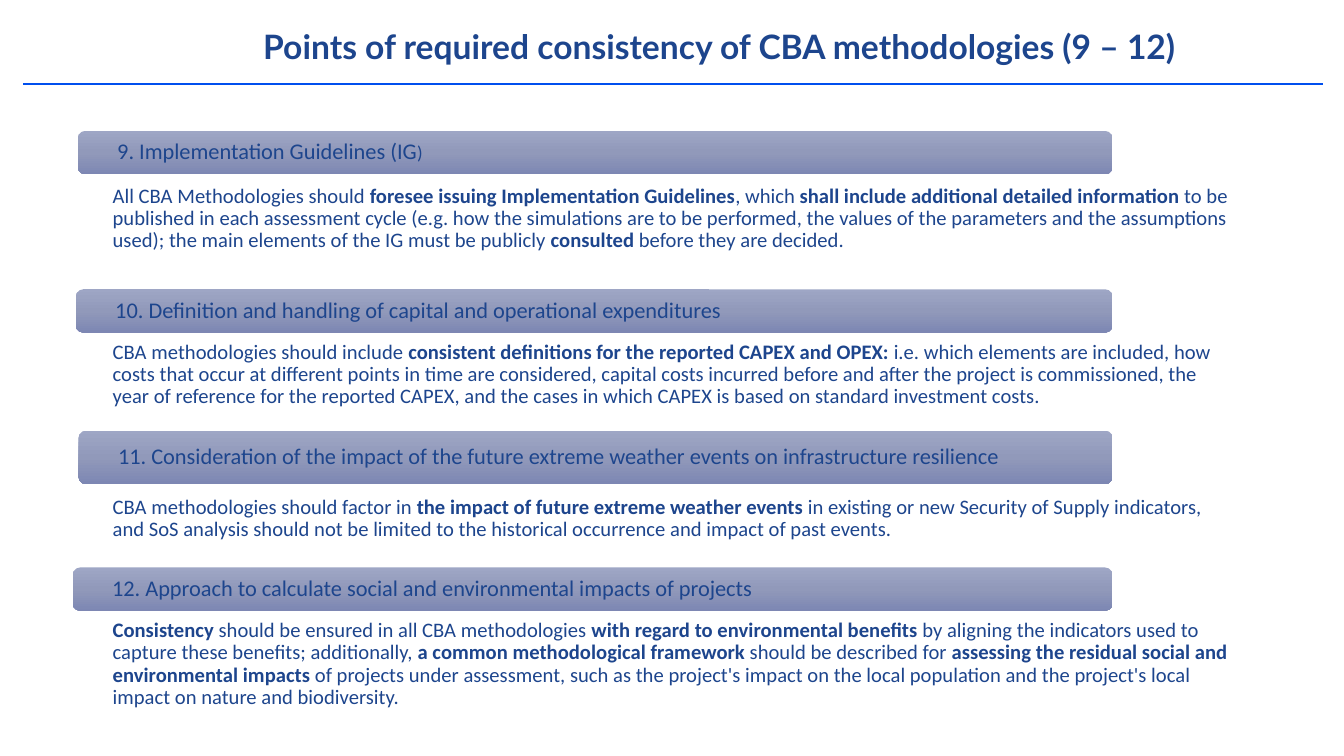
from copy import deepcopy
from dataclasses import dataclass

from lxml.etree import SubElement
from pptx import Presentation
from pptx.dml.color import RGBColor
from pptx.enum.shapes import MSO_CONNECTOR, MSO_SHAPE
from pptx.enum.text import MSO_ANCHOR, MSO_AUTO_SIZE, PP_ALIGN
from pptx.oxml.ns import qn
from pptx.slide import Slide
from pptx.util import Cm, Pt

COLOURS = {
    "text": "1D458D",
    "rule": "004FEE",
    "panel": "FFFFFF",
    "bar_top": "9EA6C5",
    "bar_middle": "9199BA",
    "bar_bottom": "7D87B3",
}
BAR_RIGHT = 28.04
BAR_RADIUS = 0.19
PANEL_LEFT, PANEL_WIDTH = 0.25, 33.38


@dataclass(frozen=True)
class Point:
    """One numbered point; lengths in cm, bold wording between ** marks."""
    heading: str
    bar_left: float
    bar_top: float
    bar_height: float
    body: str
    panel_top: float
    panel_height: float
    small_ending: str = ""


POINTS = [
    Point(
        "9. Implementation Guidelines (IG", 1.96, 3.3, 1.09,
        "All CBA Methodologies should **foresee issuing Implementation Guidelines**, which "
        "**shall include additional detailed information **to be published in each assessment "
        "cycle (e.g. how the simulations are to be performed, the values of the parameters and "
        "the assumptions used); the main elements of the IG must be publicly **consulted** "
        "before they are decided.",
        3.91, 2.8, small_ending=")",
    ),
    Point(
        "10. Definition and handling of capital and operational expenditures", 1.91, 7.29, 1.09,
        "CBA methodologies should include **consistent definitions for the reported CAPEX and "
        "OPEX: **i.e. which elements are included, how costs that occur at different points in "
        "time are considered, capital costs incurred before and after the project is "
        "commissioned, the year of reference for the reported CAPEX, and the cases in which "
        "CAPEX is based on standard investment costs.",
        7.85, 2.8,
    ),
    Point(
        "11. Consideration of the impact of the future extreme weather events on "
        "infrastructure resilience", 1.98, 10.85, 1.35,
        "CBA methodologies should factor in **the impact of future extreme weather events **in "
        "existing or new Security of Supply indicators, and SoS analysis should not be limited "
        "to the historical occurrence and impact of past events.",
        11.76, 2.21,
    ),
    Point(
        "12. Approach to calculate social and environmental impacts of projects",
        1.83, 14.3, 1.09,
        "**Consistency** should be ensured in all CBA methodologies **with regard to "
        "environmental benefits **by aligning the indicators used to capture these benefits; "
        "additionally, **a common methodological framework **should be described for "
        "**assessing the residual social and environmental impacts **of projects under "
        "assessment, such as the project's impact on the local population and the project's "
        "local impact on nature and biodiversity.",
        14.86, 3.39,
    ),
]


def colour(name: str) -> RGBColor:
    return RGBColor.from_string(COLOURS[name])


def format_paragraph(paragraph, font_name: str, size: float, spacing: float) -> None:
    paragraph.alignment = PP_ALIGN.LEFT
    paragraph.line_spacing = spacing
    paragraph.font.name = font_name
    paragraph.font.size = Pt(size)
    paragraph.font.color.rgb = colour("text")


def set_insets(frame, sides: float, top: float, bottom: float) -> None:
    frame.word_wrap = True
    frame.margin_left = frame.margin_right = Cm(sides)
    frame.margin_top, frame.margin_bottom = Cm(top), Cm(bottom)


def add_title(slide: Slide, wording: str) -> None:
    title = slide.shapes.title
    title.left, title.top, title.width, title.height = Cm(6.38), Cm(0.43), Cm(26.97), Cm(1.63)
    frame = title.text_frame
    frame.text = wording
    frame.auto_size = MSO_AUTO_SIZE.NONE
    frame.vertical_anchor = MSO_ANCHOR.TOP
    format_paragraph(frame.paragraphs[0], "Lato", 24, 1.1)
    frame.paragraphs[0].font.bold = True


def add_title_rule(slide: Slide) -> None:
    rule = slide.shapes.add_connector(
        MSO_CONNECTOR.STRAIGHT, Cm(0.58), Cm(2.11), Cm(33.35), Cm(2.11))
    rule.line.color.rgb = colour("rule")
    rule.line.width = Pt(1.5)
    SubElement(rule._element.spPr, qn("a:effectLst"))


def add_panel(slide: Slide, point: Point) -> None:
    panel = slide.shapes.add_shape(
        MSO_SHAPE.RECTANGLE, Cm(PANEL_LEFT), Cm(point.panel_top),
        Cm(PANEL_WIDTH), Cm(point.panel_height))
    panel.shadow.inherit = False
    panel.fill.solid()
    panel.fill.fore_color.rgb = colour("panel")
    fill_colour = panel._element.spPr.find(qn("a:solidFill"))[0]
    SubElement(fill_colour, qn("a:alpha"), val="90000")
    panel.line.color.rgb = colour("panel")
    panel.line.width = Pt(0.5)

    frame = panel.text_frame
    set_insets(frame, 2.59, 0.76, 0.28)
    frame.vertical_anchor = MSO_ANCHOR.TOP
    paragraph = frame.paragraphs[0]
    format_paragraph(paragraph, "Calibri", 14.7, 0.9)
    for index, wording in enumerate(point.body.split("**")):
        if wording:
            run = paragraph.add_run()
            run.text = wording
            run.font.bold = index % 2 == 1


def fill_bar(bar) -> None:
    """Apply a three-stop gradient running from top to bottom."""
    bar.fill.gradient()
    bar.fill.gradient_angle = 270
    stop_list = bar._element.spPr.find(qn("a:gradFill")).find(qn("a:gsLst"))
    stop_list.insert(1, deepcopy(stop_list[0]))
    names = ("bar_top", "bar_middle", "bar_bottom")
    for index, (stop, name) in enumerate(zip(bar.fill.gradient_stops, names)):
        stop.position = index / 2
        stop.color.rgb = colour(name)


def add_bar(slide: Slide, point: Point) -> None:
    bar = slide.shapes.add_shape(
        MSO_SHAPE.ROUNDED_RECTANGLE, Cm(point.bar_left), Cm(point.bar_top),
        Cm(BAR_RIGHT - point.bar_left), Cm(point.bar_height))
    bar.adjustments[0] = BAR_RADIUS / point.bar_height
    bar.shadow.inherit = False
    fill_bar(bar)
    bar.line.fill.background()

    frame = bar.text_frame
    set_insets(frame, 0.94, 0.05, 0.05)
    frame.vertical_anchor = MSO_ANCHOR.MIDDLE
    heading = frame.paragraphs[0]
    format_paragraph(heading, "Calibri", 16, 0.9)
    heading.add_run().text = point.heading
    if point.small_ending:
        ending = heading.add_run()
        ending.text = point.small_ending
        ending.font.size = Pt(13.3)


def main() -> None:
    presentation = Presentation()
    presentation.slide_width, presentation.slide_height = Cm(33.87), Cm(19.05)
    slide = presentation.slides.add_slide(presentation.slide_layouts.get_by_name("Title Only"))
    add_title_rule(slide)
    add_title(slide, "Points of required consistency of CBA methodologies (9 – 12)")
    for point in POINTS:
        add_panel(slide, point)
        add_bar(slide, point)
    presentation.save("out.pptx")


if __name__ == "__main__":
    main()
